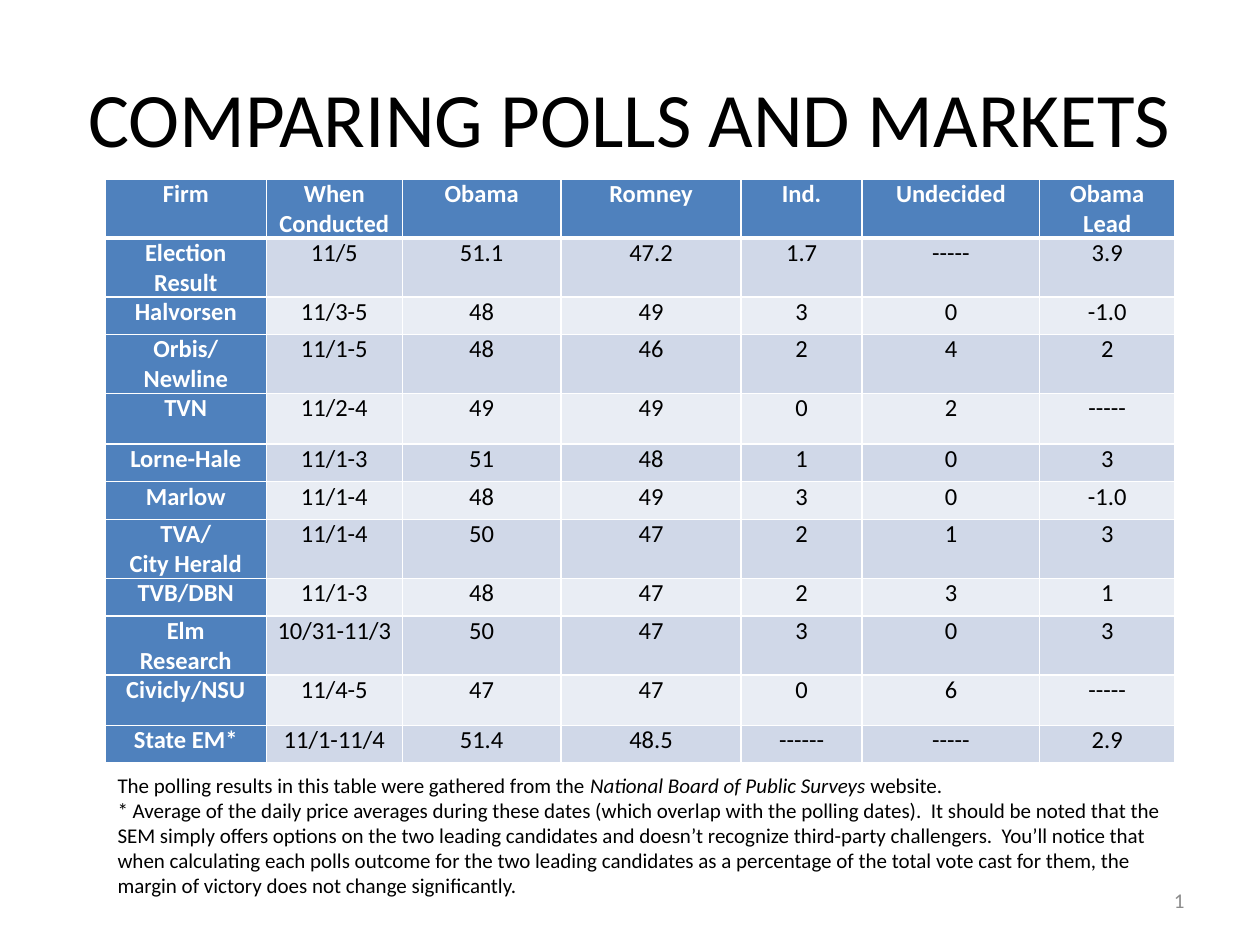
from lxml import etree
from pptx import Presentation
from pptx.dml.color import RGBColor
from pptx.enum.text import MSO_ANCHOR, MSO_AUTO_SIZE, PP_ALIGN
from pptx.oxml.ns import qn
from pptx.util import Cm, Pt

LEFT, CENTER, RIGHT = PP_ALIGN.LEFT, PP_ALIGN.CENTER, PP_ALIGN.RIGHT
TOP, MIDDLE = MSO_ANCHOR.TOP, MSO_ANCHOR.MIDDLE
GROW = MSO_AUTO_SIZE.SHAPE_TO_FIT_TEXT
BLACK, WHITE, GRAY = "000000", "FFFFFF", "8C8C8C"
HEADING_FILL = "4F81BD"
BAND_FILLS = ("E9EDF4", "D0D8E8")

COLUMN_WIDTHS = (3.25, 2.74, 3.2, 3.63, 2.44, 3.58, 2.72)
SINGLE, LOOSE, DOUBLE = 0.76, 1.02, 1.07
ROW_HEIGHTS = (DOUBLE, DOUBLE, SINGLE, DOUBLE, LOOSE, SINGLE,
               SINGLE, DOUBLE, SINGLE, DOUBLE, LOOSE, SINGLE)
POLLS = (
    ("Firm", "When\nConducted", "Obama", "Romney", "Ind.", "Undecided", "Obama Lead"),
    ("Election\nResult", "11/5", "51.1", "47.2", "1.7", "-----", "3.9"),
    ("Halvorsen", "11/3-5", "48", "49", "3", "0", "-1.0"),
    ("Orbis/\nNewline", "11/1-5", "48", "46", "2", "4", "2"),
    ("TVN", "11/2-4", "49", "49", "0", "2", "-----"),
    ("Lorne-Hale", "11/1-3", "51", "48", "1", "0", "3"),
    ("Marlow", "11/1-4", "48", "49", "3", "0", "-1.0"),
    ("TVA/\nCity Herald", "11/1-4", "50", "47", "2", "1", "3"),
    ("TVB/DBN", "11/1-3", "48", "47", "2", "3", "1"),
    ("Elm\nResearch", "10/31-11/3", "50", "47", "3", "0", "3"),
    ("Civicly/NSU", "11/4-5", "47", "47", "0", "6", "-----"),
    ("State EM*", "11/1-11/4", "51.4", "48.5", "------", "-----", "2.9"),
)
NOTES = (
    (("The polling results in this table were gathered from the ", False),
     ("National Board of Public Surveys ", True),
     ("website.", False)),
    (("* Average of the daily price averages during these dates (which overlap "
      "with the polling dates).  It should be noted that the SEM simply offers "
      "options on the two leading candidates and doesn’t recognize third-party "
      "challengers.  You’ll notice that when calculating each polls outcome for "
      "the two leading candidates as a percentage of the total vote cast for "
      "them, the margin of victory does not change significantly.", False),),
)


def rgb(value):
    return RGBColor.from_string(value)


def set_values(target, values):
    for name, value in values.items():
        setattr(target, name, value)


def write_text(frame, paragraphs, size, color, align, bold=False):
    for index, spans in enumerate(paragraphs):
        para = frame.paragraphs[0] if index == 0 else frame.add_paragraph()
        para.alignment = align
        for text, italic in spans:
            span = para.add_run()
            span.text = text
            set_values(span.font, {"name": "Calibri", "size": Pt(size),
                                   "bold": bold, "italic": italic})
            span.font.color.rgb = rgb(color)


def add_text(page, place, paragraphs, size, color, align, layout):
    box = page.shapes.add_textbox(*(Cm(length) for length in place))
    set_values(box.text_frame, {"word_wrap": True, **layout})
    write_text(box.text_frame, paragraphs, size, color, align)


def set_borders(cell, widths):
    properties = cell._tc.get_or_add_tcPr()
    for index, (side, width) in enumerate(widths.items()):
        line = etree.Element(qn(f"a:ln{side}"), w=str(Pt(width)))
        fill = etree.SubElement(line, qn("a:solidFill"))
        etree.SubElement(fill, qn("a:srgbClr"), val=WHITE)
        properties.insert(index, line)


def format_cell(cell, text, row, column):
    heading = row == 0 or column == 0
    set_values(cell, {"margin_left": Cm(0.18), "margin_right": Cm(0.18),
                      "margin_top": 0, "margin_bottom": 0,
                      "vertical_anchor": TOP})
    cell.fill.solid()
    cell.fill.fore_color.rgb = rgb(HEADING_FILL if heading else BAND_FILLS[row % 2])
    lines = [((line, False),) for line in text.split("\n")]
    write_text(cell.text_frame, lines, 14, WHITE if heading else BLACK,
               CENTER, heading)
    set_borders(cell, {"L": 1, "R": 1, "T": 3 if row == 1 else 1,
                       "B": 3 if row == 0 else 1})


def add_poll_table(page):
    table = page.shapes.add_table(
        len(POLLS), len(COLUMN_WIDTHS), Cm(2.12), Cm(3.61),
        Cm(sum(COLUMN_WIDTHS)), Cm(sum(ROW_HEIGHTS))).table
    for column, width in zip(table.columns, COLUMN_WIDTHS):
        column.width = Cm(width)
    for row, height in zip(table.rows, ROW_HEIGHTS):
        row.height = Cm(height)
    for row, values in enumerate(POLLS):
        for column, text in enumerate(values):
            format_cell(table.cell(row, column), text, row, column)


def main():
    deck = Presentation()
    set_values(deck, {"slide_width": Cm(25.4), "slide_height": Cm(19.05)})
    page = deck.slides.add_slide(deck.slide_layouts[6])
    add_text(page, (1.27, 0.76, 22.86, 3.18),
             ((("COMPARING POLLS AND MARKETS", False),),),
             44, BLACK, CENTER, {"vertical_anchor": MIDDLE})
    add_poll_table(page)
    add_text(page, (2.12, 15.44, 21.59, 3.58), NOTES,
             12, BLACK, LEFT, {"auto_size": GROW})
    add_text(page, (18.2, 17.65, 5.93, 1.01), ((("1", False),),),
             12, GRAY, RIGHT, {"vertical_anchor": MIDDLE})
    deck.save("out.pptx")


if __name__ == "__main__":
    main()
